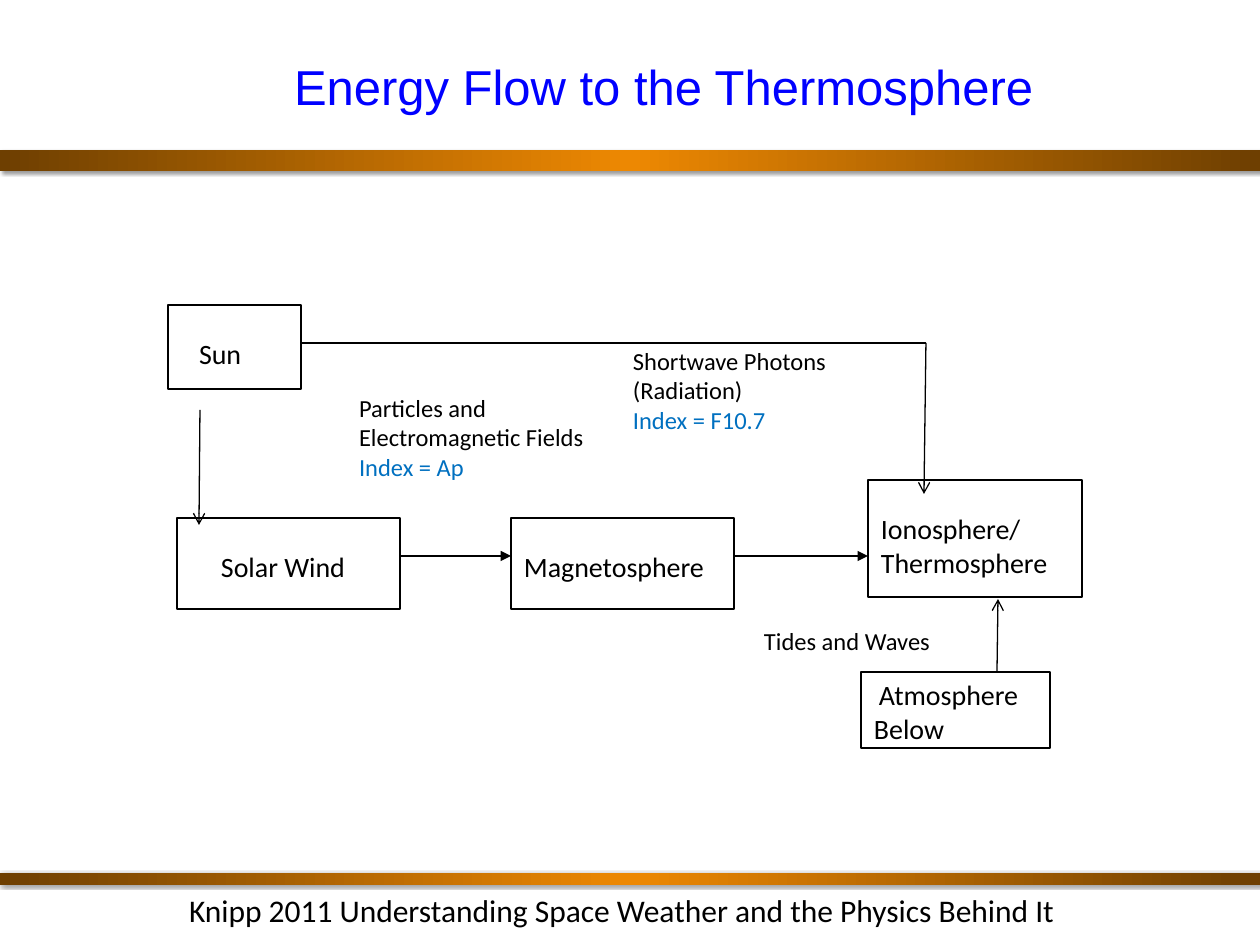
from copy import deepcopy
from dataclasses import dataclass

from lxml import etree
from pptx import Presentation
from pptx.dml.color import RGBColor
from pptx.enum.shapes import MSO_CONNECTOR, MSO_SHAPE
from pptx.enum.text import MSO_ANCHOR, PP_ALIGN
from pptx.oxml.ns import qn
from pptx.util import Emu, Pt

RECTANGLE = MSO_SHAPE.RECTANGLE
STRAIGHT = MSO_CONNECTOR.STRAIGHT
TOP, MIDDLE = MSO_ANCHOR.TOP, MSO_ANCHOR.MIDDLE
LEFT, CENTER = PP_ALIGN.LEFT, PP_ALIGN.CENTER

PX_PER_INCH = 126
BLACK, WHITE = "000000", "FFFFFF"
TITLE_BLUE, INDEX_BLUE = "0000FF", "0070C0"
BROWN, ORANGE, SHADOW_GRAY = "6E3F01", "ED8802", "808080"
LINE_WIDTH = Pt(0.75)
INSET_X, INSET_Y = 13, 6


@dataclass(frozen=True)
class TextBlock:
    """Paragraphs are tuples of (text, colour) runs."""
    box: tuple[int, int, int, int]
    paragraphs: tuple
    size: int
    font: str = "Calibri"
    inset_left: int = INSET_X
    inset_top: int = INSET_Y
    first_indent: int = 0
    align: PP_ALIGN = LEFT
    anchor: MSO_ANCHOR = TOP


@dataclass(frozen=True)
class Flow:
    start: tuple[int, int]
    end: tuple[int, int]
    head: str = ""


@dataclass(frozen=True)
class Bar:
    top: int
    height: int
    shadow_distance: int


def px(length: int) -> Emu:
    return Emu(round(length * 914400 / PX_PER_INCH))


def color(hex_value: str) -> RGBColor:
    return RGBColor.from_string(hex_value)


def plain(text: str) -> tuple:
    return ((text, BLACK),)


def stage(box, *lines: str, inset_left=INSET_X, inset_top=32, first_indent=0):
    """Describe the label of one boxed stage in the energy flow."""
    return TextBlock(box, tuple(plain(line) for line in lines), 16,
                     inset_left=inset_left, inset_top=inset_top,
                     first_indent=first_indent)


TITLE = TextBlock((73, 0, 1081, 171),
                  ((("Energy Flow to the Thermosphere", TITLE_BLUE),),),
                  28, "Arial", inset_left=113, align=CENTER, anchor=MIDDLE)
STAGES = (
    stage((168, 305, 133, 84), "Sun", inset_left=31),
    stage((177, 518, 223, 91), "Solar Wind", inset_left=44),
    stage((511, 518, 223, 91), "Magnetosphere"),
    stage((868, 480, 214, 117), "Ionosphere/", "Thermosphere"),
    stage((861, 672, 189, 76), "Atmosphere Below",
          inset_top=INSET_Y, first_indent=5),
)
NOTES = (
    TextBlock((346, 387, 257, 76),
              (plain("Particles and"),
               (("Electromagnetic Fields ", BLACK),
                ("Index = Ap", INDEX_BLUE))), 14),
    TextBlock((620, 340, 263, 115),
              (plain("Shortwave Photons (Radiation)"),
               (("Index = F10.7", INDEX_BLUE),)), 14),
    TextBlock((751, 620, 257, 68), (plain("Tides and Waves"),), 14),
    TextBlock((176, 885, 987, 55),
              (plain("Knipp 2011 Understanding Space Weather "
                     "and the Physics Behind It"),), 18),
)
FLOWS = (
    Flow((400, 556), (511, 556), "triangle"),
    Flow((734, 556), (868, 556), "triangle"),
    Flow((301, 343), (926, 343)),
    Flow((926, 343), (924, 494), "arrow"),
    Flow((200, 410), (199, 525), "arrow"),
    Flow((997, 672), (998, 599), "arrow"),
)
BARS = (Bar(150, 21, 2), Bar(873, 12, 1))


def write_text(shape, block: TextBlock) -> None:
    frame = shape.text_frame
    frame_format = {
        "word_wrap": True,
        "vertical_anchor": block.anchor,
        "margin_left": px(block.inset_left),
        "margin_right": px(INSET_X),
        "margin_top": px(block.inset_top),
        "margin_bottom": px(INSET_Y),
    }
    for name, value in frame_format.items():
        setattr(frame, name, value)
    for index, runs in enumerate(block.paragraphs):
        paragraph = frame.add_paragraph() if index else frame.paragraphs[0]
        paragraph.alignment = block.align
        if block.first_indent:
            paragraph._p.get_or_add_pPr().set(
                "indent", str(px(block.first_indent)))
        for text, hex_value in runs:
            run = paragraph.add_run()
            run.text = text
            for name, value in {"name": block.font,
                                "size": Pt(block.size)}.items():
                setattr(run.font, name, value)
            run.font.color.rgb = color(hex_value)


def draw_note(slide, block: TextBlock) -> None:
    write_text(slide.shapes.add_textbox(*map(px, block.box)), block)


def draw_stage(slide, block: TextBlock) -> None:
    shape = slide.shapes.add_shape(RECTANGLE, *map(px, block.box))
    shape.shadow.inherit = False
    shape.fill.solid()
    shape.fill.fore_color.rgb = color(WHITE)
    shape.line.color.rgb = color(BLACK)
    shape.line.width = LINE_WIDTH
    write_text(shape, block)


def draw_flow(slide, flow: Flow) -> None:
    connector = slide.shapes.add_connector(
        STRAIGHT, *map(px, flow.start + flow.end))
    connector.line.color.rgb = color(BLACK)
    connector.line.width = LINE_WIDTH
    properties = connector._element.spPr
    if flow.head:
        etree.SubElement(properties.find(qn("a:ln")), qn("a:tailEnd"),
                         type=flow.head)
    etree.SubElement(properties, qn("a:effectLst"))


def draw_bar(slide, bar: Bar) -> None:
    """Draw a full-width bar, bright in the middle, with a soft shadow."""
    shape = slide.shapes.add_shape(
        RECTANGLE, 0, px(bar.top), px(1260), px(bar.height))
    shape.line.fill.background()
    shape.fill.gradient()
    shape.fill.gradient_angle = 0
    properties = shape._element.spPr
    stop_list = properties.find(qn("a:gradFill")).find(qn("a:gsLst"))
    stop_list.append(deepcopy(stop_list[0]))
    stops = zip(shape.fill.gradient_stops,
                ((0, BROWN), (0.5, ORANGE), (1, BROWN)))
    for stop, (position, hex_value) in stops:
        stop.position = position
        stop.color.rgb = color(hex_value)

    shape.shadow.inherit = False
    shadow = etree.SubElement(
        properties.find(qn("a:effectLst")), qn("a:outerShdw"),
        blurRad=str(Pt(2)), dist=str(Pt(bar.shadow_distance)),
        dir=str(45 * 60000), algn="tl", rotWithShape="0")
    shade = etree.SubElement(shadow, qn("a:srgbClr"), val=SHADOW_GRAY)
    etree.SubElement(shade, qn("a:alpha"), val="80000")


def main() -> None:
    presentation = Presentation()
    presentation.slide_width = px(1260)
    presentation.slide_height = px(945)
    slide = presentation.slides.add_slide(presentation.slide_layouts[6])
    for draw, items in ((draw_note, (TITLE,)), (draw_stage, STAGES),
                        (draw_flow, FLOWS), (draw_bar, BARS),
                        (draw_note, NOTES)):
        for item in items:
            draw(slide, item)
    presentation.save("out.pptx")


if __name__ == "__main__":
    main()
